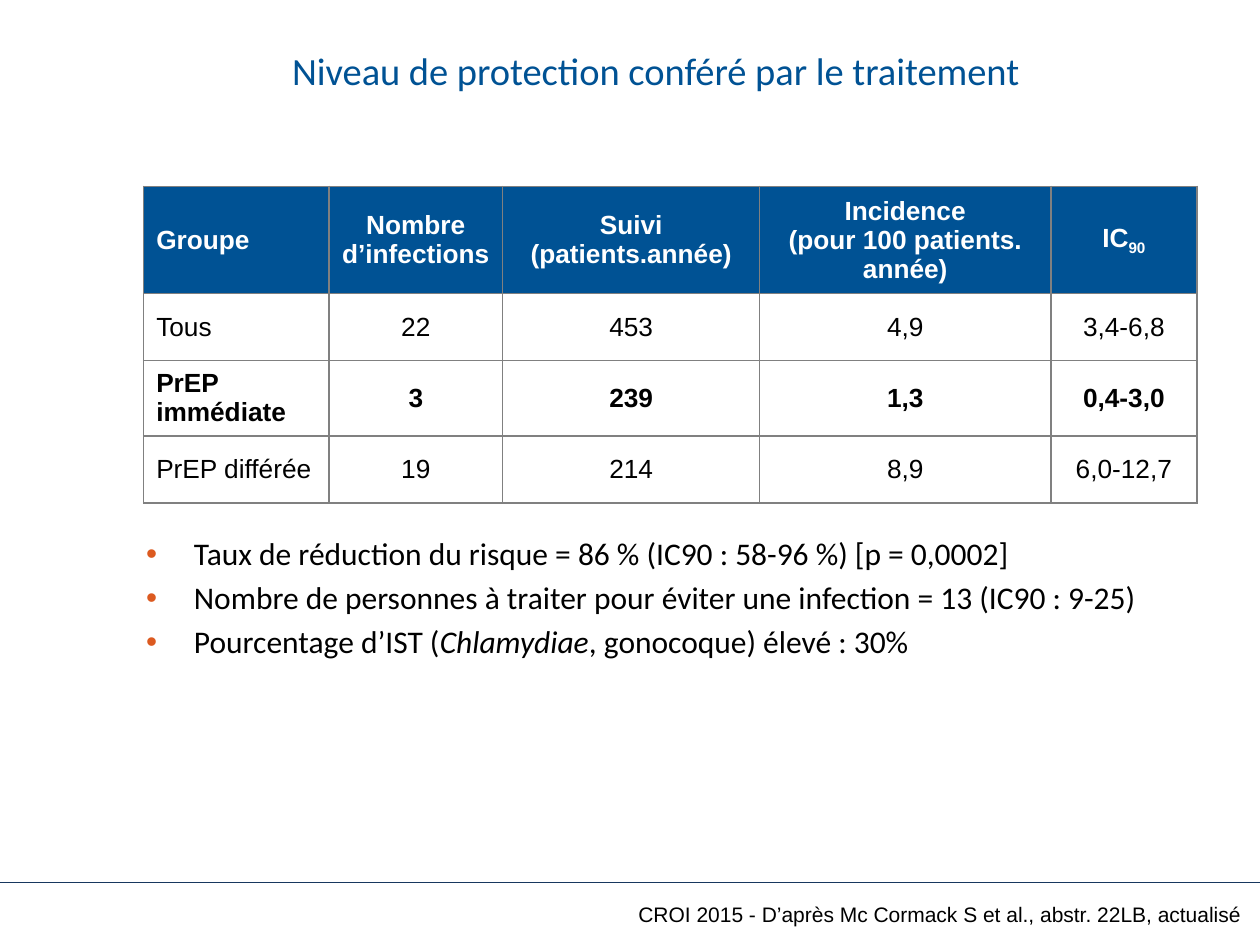
from dataclasses import dataclass

from lxml import etree
from pptx import Presentation
from pptx import util as u
from pptx.dml.color import RGBColor as Rgb
from pptx.enum import shapes, text
from pptx.oxml import ns

COLS, ROWS = 100, 75  # slide grid
WIDE, HIGH = u.Inches(10), u.Inches(7.5)
MID = text.MSO_ANCHOR.MIDDLE
LEFT, CENTER, RIGHT = text.PP_ALIGN.LEFT, text.PP_ALIGN.CENTER, text.PP_ALIGN.RIGHT


@dataclass(frozen=True)
class Theme:
    blue: str = "005294"
    rule: str = "17375E"
    dot: str = "DC5A20"
    edge: str = "808080"
    ink: str = "000000"
    white: str = "FFFFFF"
    head: str = "Calibri"
    body: str = "Arial"
    title: int = 22
    list: int = 18
    cell: int = 15
    note: int = 12


T = Theme()

HEADS = ["Groupe", "Nombre d’infections", "Suivi\n(patients.année)",
         "Incidence\n(pour 100 patients. année)", "IC"]
DATA = [
    ["Tous", "22", "453", "4,9", "3,4-6,8"],
    ["PrEP immédiate", "3", "239", "1,3", "0,4-3,0"],
    ["PrEP différée", "19", "214", "8,9", "6,0-12,7"],
]
BOLD = 2  # table row in bold besides the header
POINTS = [
    [("Taux de réduction du risque = 86 % (IC90 : 58-96 %) [p = 0,0002]", False)],
    [("Nombre de personnes à traiter pour éviter une infection\u00a0= 13 (IC90 : 9-25)", False)],
    [("Pourcentage d’IST (", False), ("Chlamydiae", True),
     (", gonocoque) élevé : 30%", False)],
]


def x(n):
    return round(WIDE * n / COLS)


def y(n):
    return round(HIGH * n / ROWS)


def sub(node, tag, **attrs):
    return etree.SubElement(node, ns.qn(tag), **attrs)


def add_run(para, words, size, font, color, bold=False, italic=False):
    run = para.add_run()
    run.text = words
    f = run.font
    f.size, f.name, f.bold, f.italic = u.Pt(size), font, bold, italic
    f.color.rgb = Rgb.from_string(color)
    return run


def add_box(slide, left, top, wide, high, inset=None, anchor=text.MSO_ANCHOR.TOP):
    frame = slide.shapes.add_textbox(x(left), y(top), x(wide), y(high)).text_frame
    frame.word_wrap, frame.vertical_anchor = True, anchor
    if inset is not None:
        frame.margin_left = frame.margin_right = inset
        frame.margin_top = frame.margin_bottom = inset
    return frame


def add_rule(slide, top):
    line = slide.shapes.add_connector(
        shapes.MSO_CONNECTOR.STRAIGHT, 0, y(top), WIDE, y(top))
    line.line.color.rgb = Rgb.from_string(T.rule)
    line.line.width = u.Pt(0.25)
    sub(line._element.spPr, "a:effectLst")


def add_list(frame, points):
    for i, parts in enumerate(points):
        para = frame.paragraphs[0] if i == 0 else frame.add_paragraph()
        para.space_before = u.Pt(0.2 * T.list)
        props = para._p.get_or_add_pPr()
        props.set("marL", str(x(3.8)))
        props.set("indent", str(-x(3.8)))
        sub(sub(props, "a:buClr"), "a:srgbClr", val=T.dot)
        sub(props, "a:buFont", typeface=T.body)
        sub(props, "a:buChar", char="•")
        for words, italic in parts:
            add_run(para, words, T.list, T.head, T.ink, italic=italic)


def fill_cell(cell, words, align, fill, color, bold):
    cell.fill.solid()
    cell.fill.fore_color.rgb = Rgb.from_string(fill)
    cell.vertical_anchor = MID
    para = cell.text_frame.paragraphs[0]
    para.alignment = align
    for i, part in enumerate(words.split("\n")):
        if i:
            para.add_line_break()
        add_run(para, part, T.cell, T.body, color, bold)
    # Borders come before the fill in the cell's properties
    props = cell._tc.get_or_add_tcPr()
    for i, side in enumerate(("a:lnL", "a:lnR", "a:lnT", "a:lnB")):
        edge = sub(props, side, w=str(u.Pt(1)))
        sub(sub(edge, "a:solidFill"), "a:srgbClr", val=T.edge)
        props.insert(i, edge)


def add_grid(slide, left, top, wides, highs, rows):
    grid = slide.shapes.add_table(
        len(rows), len(wides), x(left), y(top), x(sum(wides)), y(sum(highs))).table
    for col, wide in zip(grid.columns, wides):
        col.width = x(wide)
    for row, high in zip(grid.rows, highs):
        row.height = y(high)
    for r, row in enumerate(rows):
        fill, color = (T.white, T.ink) if r else (T.blue, T.white)
        for c, words in enumerate(row):
            fill_cell(grid.cell(r, c), words, CENTER if c else LEFT,
                      fill, color, r in (0, BOLD))
    return grid


def main():
    deck = Presentation()
    deck.slide_width, deck.slide_height = WIDE, HIGH
    slide = deck.slides.add_slide(deck.slide_layouts[6])

    # Footer rule
    add_rule(slide, 70)

    # Findings
    add_list(add_box(slide, 11.6, 42.4, 83.4, 20.5, inset=0), POINTS)

    # Title
    para = add_box(slide, 11.6, 2.6, 80.9, 6.6, inset=0, anchor=MID).paragraphs[0]
    para.alignment, para.line_spacing = CENTER, u.Pt(T.title)
    add_run(para, "Niveau de protection conféré par le traitement",
            T.title, T.head, T.blue)

    # Source credit
    para = add_box(slide, 35.3, 70, 64.7, 5.1, anchor=MID).paragraphs[0]
    para.alignment = RIGHT
    add_run(para, "CROI 2015 - D’après Mc Cormack S et al., abstr. 22LB, actualisé ",
            T.note, T.body, T.ink)

    # Results table, with the subscript in its last heading
    grid = add_grid(slide, 11.4, 14.8, [14.7, 13.8, 20.4, 23.1, 11.6],
                    [8.3] + [5.3] * len(DATA), [HEADS] + DATA)
    para = grid.cell(0, len(HEADS) - 1).text_frame.paragraphs[0]
    low = add_run(para, "90", T.cell, T.body, T.white, bold=True)
    low.font._element.set("baseline", "-25000")

    deck.save("out.pptx")


if __name__ == "__main__":
    main()
